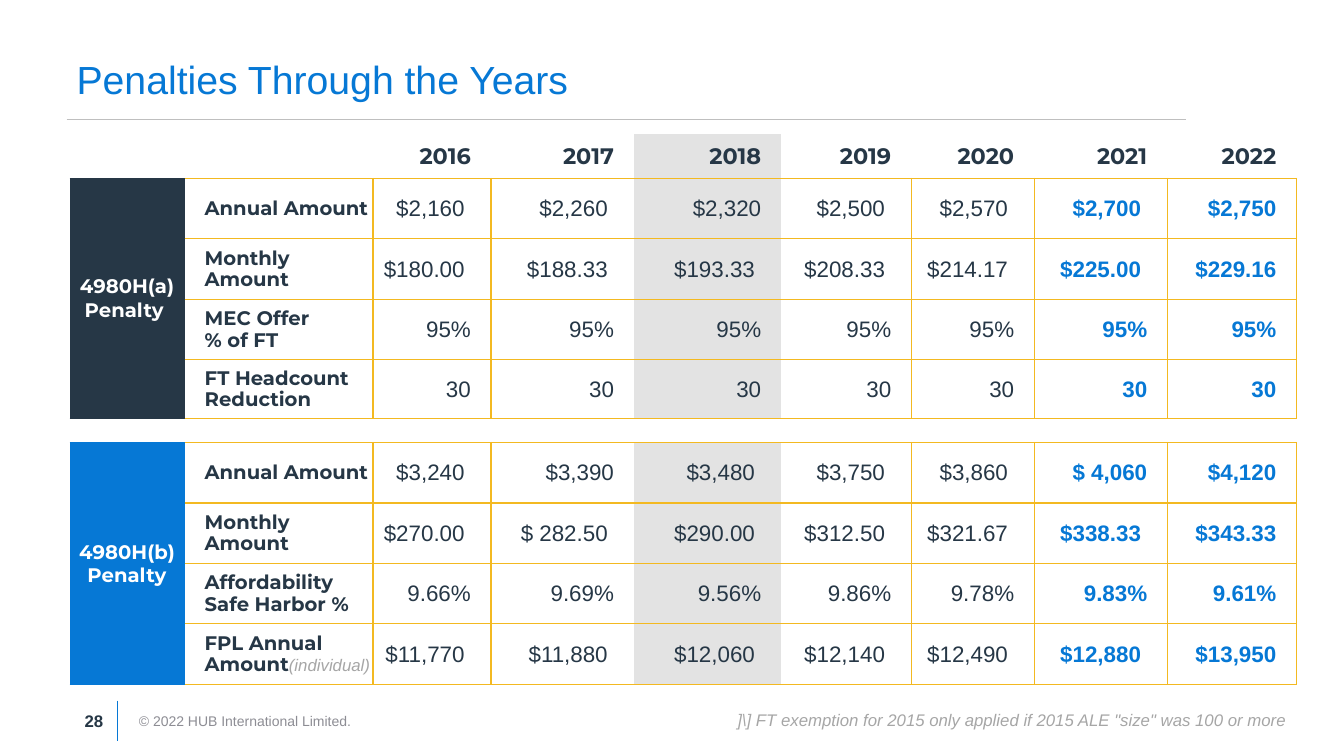
from typing import NamedTuple, Optional

from lxml import etree
from pptx import Presentation
from pptx import util as u
from pptx.dml.color import RGBColor
from pptx.enum import shapes, text
from pptx.oxml.ns import qn

HUE = {"navy": "263746", "blue": "0678D5", "gold": "F3B921", "band": "E3E3E3",
       "white": "FFFFFF", "rule": "BFBFBF", "note": "A6A6A6", "foot": "8D8D94"}
LEFT, MID, RIGHT = text.PP_ALIGN.LEFT, text.PP_ALIGN.CENTER, text.PP_ALIGN.RIGHT


class Row(NamedTuple):
    label: str
    values: list[str]
    note: str = ""


class Block(NamedTuple):
    name: str
    hue: str
    rows: list[Row]


class Line(NamedTuple):
    x1: float
    y1: float
    x2: float
    y2: float
    hue: str


YEARS = [str(year) for year in range(2016, 2023)]
# A trailing space sets an amount slightly in from the right margin.
BLOCKS = [
    Block("4980H(a) Penalty ", "navy", [
        Row("Annual Amount", ["$2,160 ", "$2,260 ", "$2,320", "$2,500 ", "$2,570 ",
                              "$2,700 ", "$2,750"]),
        Row("Monthly Amount", ["$180.00 ", "$188.33 ", "$193.33 ", "$208.33 ",
                               "$214.17 ", "$225.00 ", "$229.16"]),
        Row("MEC Offer\n% of FT", ["95%"] * 7),
        Row("FT Headcount\nReduction", ["30"] * 7),
    ]),
    Block("4980H(b) Penalty", "blue", [
        Row("Annual Amount", ["$3,240 ", "$3,390", "$3,480 ", "$3,750 ", "$3,860 ",
                              "$ 4,060", "$4,120"]),
        Row("Monthly Amount", ["$270.00 ", "$ 282.50 ", "$290.00 ", "$312.50 ",
                               "$321.67 ", "$338.33 ", "$343.33"]),
        Row("Affordability\nSafe Harbor %", ["9.66%", "9.69%", "9.56%", "9.86%",
                                             "9.78%", "9.83%", "9.61%"]),
        Row("FPL Annual\nAmount", ["$11,770 ", "$11,880 ", "$12,060 ", "$12,140 ",
                                   "$12,490 ", "$12,880 ", "$13,950"], "(individual)"),
    ]),
]
STARTS = [1, 6]
GAP = 5
WIDTHS = [1.14, 1.87, 1.17, 1.42, 1.46, 1.29, 1.22, 1.32, 1.28]
HEIGHTS = [0.44, 0.6, 0.6, 0.6, 0.58, 0.24, 0.6, 0.6, 0.6, 0.6]
BAND = 4
RULED = {2, 3, 6, 7, 8, 9}
LINES = [Line(1.16, 6.95, 1.16, 7.35, "blue"), Line(0.66, 1.18, 11.76, 1.18, "rule")]


def tint(name: str) -> RGBColor:
    return RGBColor.from_string(HUE[name])


def put(para, words: str, size: float = 16, face: str = "Arial", hue: str = "navy",
        bold: bool = False, slant: bool = False, align=LEFT,
        space: Optional[float] = None) -> None:
    """Append words to a paragraph, with a line break at each newline."""
    para.alignment = align
    if space:
        para.line_spacing = space
    for i, part in enumerate(words.split("\n")):
        if i:
            para.add_line_break()
        run = para.add_run()
        run.text = part
        font = run.font
        font.size, font.name = u.Pt(size), face
        font.bold, font.italic = bold, slant
        font.color.rgb = tint(hue)


def add_box(slide, left: float, top: float, width: float, height: float,
            words: str, anchor=text.MSO_ANCHOR.MIDDLE, **form) -> None:
    box = slide.shapes.add_textbox(*map(u.Inches, (left, top, width, height)))
    frame = box.text_frame
    frame.word_wrap = True
    frame.vertical_anchor = anchor
    put(frame.paragraphs[0], words, **form)


def add_line(slide, line: Line) -> None:
    ends = map(u.Inches, line[:4])
    rule = slide.shapes.add_connector(shapes.MSO_CONNECTOR.STRAIGHT, *ends)
    rule.line.color.rgb = tint(line.hue)
    rule.line.width = u.Pt(0.5)
    etree.SubElement(rule._element.spPr, qn("a:effectLst"))


def edge(cell, side: str, hue: Optional[str]) -> None:
    line = etree.SubElement(cell._tc.get_or_add_tcPr(), qn(f"a:ln{side}"), w="12700")
    if hue:
        fill = etree.SubElement(line, qn("a:solidFill"))
        etree.SubElement(fill, qn("a:srgbClr"), val=HUE[hue])
    else:
        etree.SubElement(line, qn("a:noFill"))


def flat(row: int, col: int) -> Optional[str]:
    """Colour of the horizontal rule above the given row."""
    if row == 0:
        return None
    if col:
        return "gold"
    return "navy" if row <= GAP else "blue"


def dress(cell, row: int, col: int) -> None:
    """Set the borders, fill and margins of a cell."""
    body = row not in (0, GAP)
    for side, x in (("L", col), ("R", col + 1)):
        edge(cell, side, "gold" if body and x in RULED else None)
    for side, y in (("T", row), ("B", row + 1)):
        edge(cell, side, flat(y, col))
    if body and col == 0:
        hue = BLOCKS[row > GAP].hue
    elif col == BAND and row != GAP:
        hue = "band"
    elif row == GAP or col == BAND + 1:
        hue = "white"
    else:
        hue = None
    if hue:
        cell.fill.solid()
        cell.fill.fore_color.rgb = tint(hue)
    else:
        cell.fill.background()
    cell.margin_left = u.Inches(0.2 if col == 1 else 0.01)
    cell.margin_right = u.Inches(0.2 if col > 1 else 0.01)
    cell.margin_top, cell.margin_bottom = u.Inches(0.01), 0
    cell.vertical_anchor = text.MSO_ANCHOR.MIDDLE


def add_grid(slide) -> None:
    frame = slide.shapes.add_table(
        len(HEIGHTS), len(WIDTHS), u.Inches(0.69), u.Inches(1.33),
        u.Inches(sum(WIDTHS)), u.Inches(sum(HEIGHTS)))
    grid = frame.table
    grid.first_row = grid.horz_banding = False
    for col, width in zip(grid.columns, WIDTHS):
        col.width = u.Inches(width)
    for r, height in enumerate(HEIGHTS):
        grid.rows[r].height = u.Inches(height)
        for c in range(len(WIDTHS)):
            dress(grid.cell(r, c), r, c)

    def fill(r: int, c: int, words: str, **form) -> None:
        put(grid.cell(r, c).text_frame.paragraphs[0], words, **form)

    head = {"face": "Montserrat", "bold": True}
    for c, year in enumerate(YEARS, 2):
        fill(0, c, year, align=RIGHT, **head)
    for start, block in zip(STARTS, BLOCKS):
        fill(start, 0, block.name, size=14, hue="white", align=MID, **head)
        for r, row in enumerate(block.rows, start):
            fill(r, 1, row.label, size=14, space=0.9, **head)
            if row.note:
                fill(r, 1, row.note, size=12, hue="note", slant=True, space=0.9)
            for c, value in enumerate(row.values, 2):
                late = c >= 7
                fill(r, c, value, hue="blue" if late else "navy", bold=late, align=RIGHT)
        grid.cell(start, 0).merge(grid.cell(start + len(block.rows) - 1, 0))
    for c in range(len(WIDTHS)):
        para = grid.cell(GAP, c).text_frame.paragraphs[0]
        etree.SubElement(para._p, qn("a:endParaRPr"), sz="800")


def main() -> None:
    deck = Presentation()
    deck.slide_width, deck.slide_height = u.Inches(13.33), u.Inches(7.5)
    slide = deck.slides.add_slide(deck.slide_layouts[5])
    for line in LINES:
        add_line(slide, line)
    add_box(slide, 1.28, 6.95, 4.5, 0.4, "© 2022 HUB International Limited.",
            size=10, hue="foot")
    add_box(slide, 0.74, 6.95, 0.51, 0.4, "28", size=12, bold=True)
    title = slide.shapes.title
    title.left, title.top = u.Inches(0.66), u.Inches(0.45)
    title.width, title.height = u.Inches(11.1), u.Inches(0.73)
    title.text_frame.auto_size = text.MSO_AUTO_SIZE.NONE
    title.text_frame.vertical_anchor = text.MSO_ANCHOR.MIDDLE
    put(title.text_frame.paragraphs[0], "Penalties Through the Years",
        size=28, hue="blue", space=0.9)
    add_grid(slide)
    add_box(slide, 4.76, 6.99, 8.1, 0.3,
            ']\\] FT exemption for 2015 only applied if 2015 ALE "size" was 100 or more',
            anchor=text.MSO_ANCHOR.TOP, size=12, hue="note", slant=True, align=RIGHT)
    deck.save("out.pptx")


if __name__ == "__main__":
    main()
